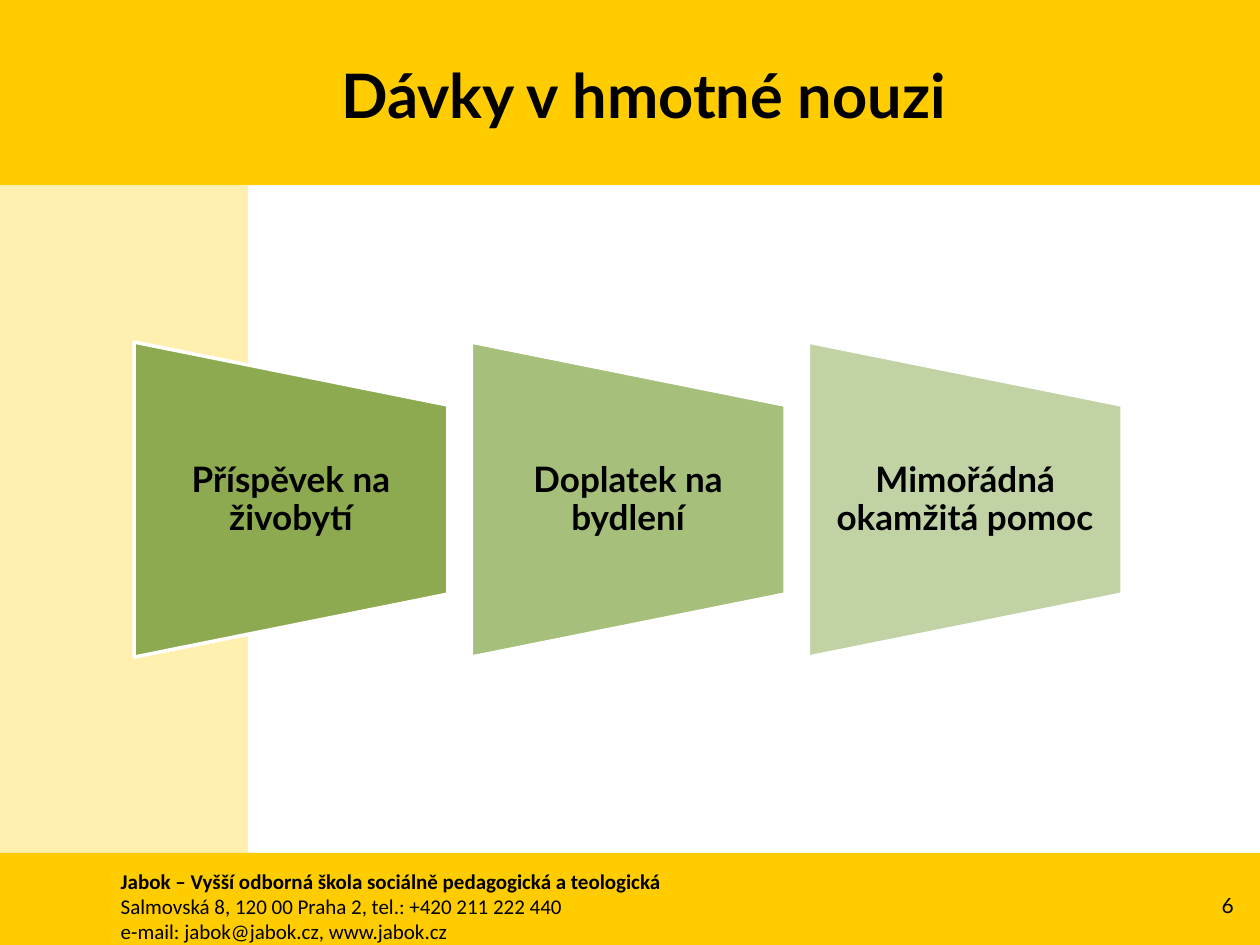
import pptx
import pptx.util
import pptx.dml.color
import pptx.enum.shapes
import pptx.enum.text

Inches = pptx.util.Inches
Pt = pptx.util.Pt
Shape = pptx.enum.shapes.MSO_SHAPE
Align = pptx.enum.text.PP_ALIGN
Anchor = pptx.enum.text.MSO_ANCHOR

deck = pptx.Presentation()
deck.slide_width = Inches(10)
deck.slide_height = Inches(7.5)
slide = deck.slides.add_slide(deck.slide_layouts[6])


def block(kind, left, top, width, height, color):
    shape = slide.shapes.add_shape(
        kind, Inches(left), Inches(top), Inches(width), Inches(height))
    shape.shadow.inherit = False
    shape.fill.solid()
    shape.fill.fore_color.rgb = pptx.dml.color.RGBColor.from_string(color)
    shape.line.fill.background()
    return shape


def write(lines, left, top, width, height, size, face="Lato", bold=False,
          align=Align.LEFT, anchor=Anchor.MIDDLE):
    box = slide.shapes.add_textbox(
        Inches(left), Inches(top), Inches(width), Inches(height))
    frame = box.text_frame
    frame.word_wrap = True
    frame.vertical_anchor = anchor
    frame.text = "\n".join(lines)
    for para in frame.paragraphs:
        para.alignment = align
        para.font.size = Pt(size)
        para.font.name = face
        para.font.bold = bold
        para.font.color.rgb = pptx.dml.color.RGBColor.from_string("000000")
    return frame


# Header, side and footer bands
block(Shape.RECTANGLE, 0, 0, 10, 1.47, "FFCC00")
block(Shape.RECTANGLE, 0, 1.47, 1.97, 5.3, "FFF0AF")
block(Shape.RECTANGLE, 0, 6.77, 10, 0.73, "FFCC00")

# School address and page number
school = write(
    ["Jabok – Vyšší odborná škola sociálně pedagogická a teologická",
     "Salmovská 8, 120 00 Praha 2, tel.: +420 211 222 440",
     "e-mail: jabok@jabok.cz, www.jabok.cz"],
    0.86, 6.84, 8.19, 0.71, 12, "Calibri", anchor=Anchor.TOP)
school.paragraphs[0].font.bold = True
write(["6"], 9.26, 6.98, 0.63, 0.4, 12, align=Align.RIGHT)

# Three benefits, from dark to light green
gains = [("Příspěvek na živobytí", "8DAA51"),
         ("Doplatek na bydlení", "A6BF7A"),
         ("Mimořádná okamžitá pomoc", "C1D3A5")]
for i, (name, color) in enumerate(gains):
    left = 1.06 + i * 2.675
    shape = block(Shape.FLOWCHART_MANUAL_OPERATION,
                  left, 2.72, 2.5, 2.49, color)
    shape.rotation = 270
    shape.line.color.rgb = pptx.dml.color.RGBColor.from_string("FFFFFF")
    shape.line.width = Pt(2)
    frame = write([name], left, 3.22, 2.5, 1.5, 20, bold=True,
                  align=Align.CENTER)
    frame.margin_left = frame.margin_right = Inches(0.14)
    frame.margin_top = frame.margin_bottom = 0
    frame.paragraphs[0].line_spacing = 0.9

# Title
write(["Dávky v hmotné nouzi"], 0.51, 0.36, 9.2, 0.77, 35, bold=True,
      align=Align.CENTER)

deck.save("out.pptx")
